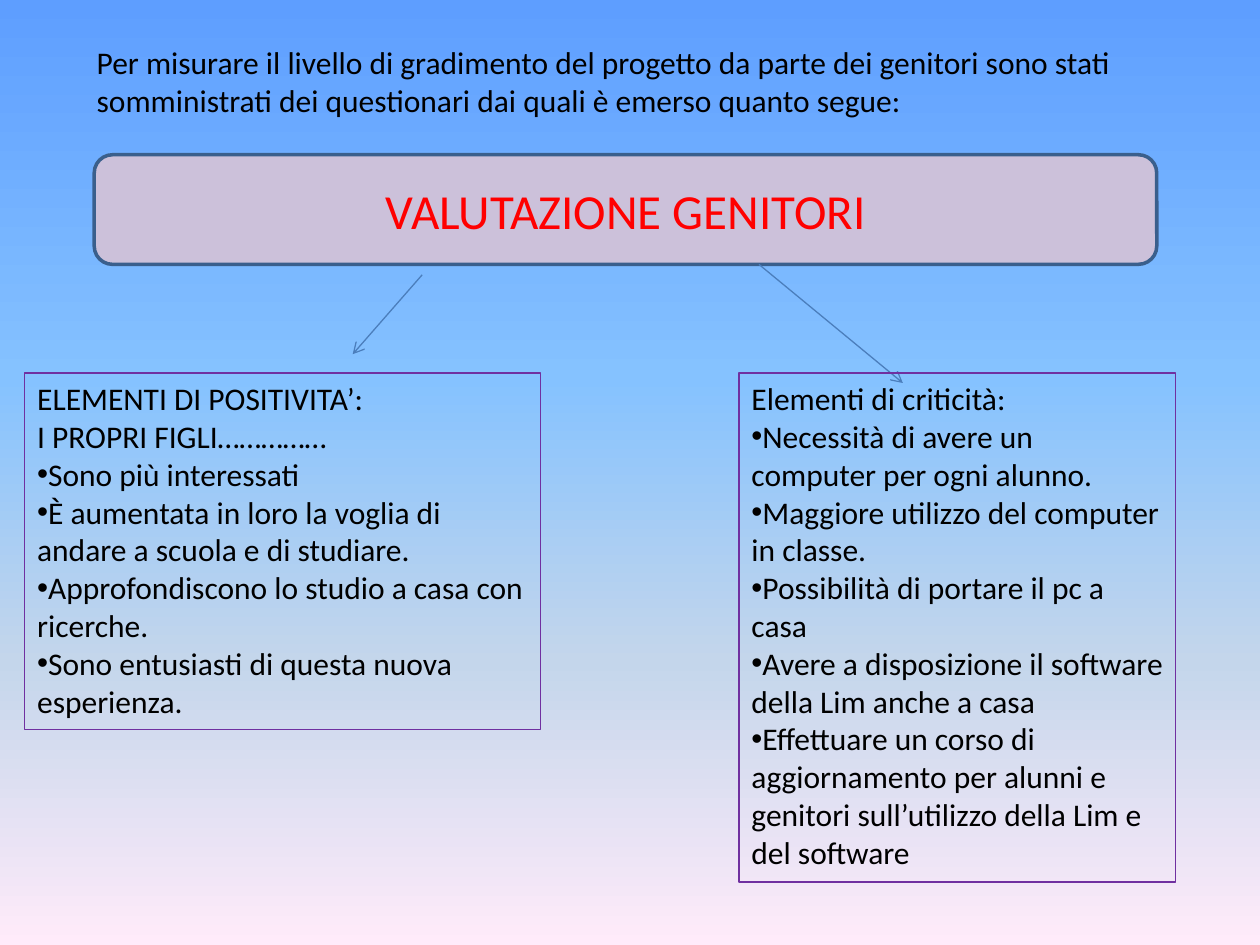
from lxml.etree import SubElement
from pptx import Presentation
from pptx.dml.color import RGBColor
from pptx.enum.shapes import MSO_CONNECTOR, MSO_SHAPE
from pptx.enum.text import MSO_ANCHOR, MSO_AUTO_SIZE, PP_ALIGN
from pptx.oxml.ns import qn
from pptx.util import Cm, Pt

COLORS = {
    "text": "000000",
    "title": "FF0000",
    "banner": "CCC1DA",
    "banner_line": "3A5F8C",
    "arrow": "4B7EBC",
    "box_line": "7030A0",
}
BACKGROUND_STOPS = [(0, "5E9EFF"), (40, "85C2FF"), (70, "C4D6EB"), (100, "FFEBFA")]
FONT = "Calibri"
BOX_TOP = 7.52

INTRO = (
    "Per misurare il livello di gradimento del progetto da parte dei genitori sono stati "
    "somministrati dei questionari dai quali è emerso quanto segue:"
)
STRENGTH_HEADINGS = ["ELEMENTI DI POSITIVITA’:", "I PROPRI FIGLI……………"]
STRENGTHS = [
    "Sono più interessati",
    "È aumentata in loro la voglia di andare a scuola e di studiare.",
    "Approfondiscono lo studio a casa con ricerche.",
    "Sono entusiasti di questa nuova esperienza.",
]
WEAKNESS_HEADINGS = ["Elementi di criticità:"]
WEAKNESSES = [
    "Necessità di avere un computer per ogni alunno.",
    "Maggiore utilizzo del computer in classe.",
    "Possibilità di portare il pc a casa",
    "Avere a disposizione il software della Lim anche a casa",
    "Effettuare un corso di aggiornamento per alunni e genitori sull’utilizzo della Lim "
    "e del software",
]


def color(name):
    return RGBColor.from_string(COLORS[name])


def set_line(line, color_name, width):
    line.color.rgb = color(color_name)
    line.width = Pt(width)


def paint_background(slide):
    fill = slide.background.fill
    fill.gradient()
    fill.gradient_angle = 270
    stop_list = slide.background._cSld.find(".//" + qn("a:gsLst"))
    for stop in list(stop_list):
        stop_list.remove(stop)
    for percent, hex_color in BACKGROUND_STOPS:
        stop = SubElement(stop_list, qn("a:gs"), pos=str(percent * 1000))
        SubElement(stop, qn("a:srgbClr"), val=hex_color)


def add_run(paragraph, text, size=18, color_name="text"):
    run = paragraph.add_run()
    run.text = text
    run.font.name = FONT
    run.font.size = Pt(size)
    run.font.color.rgb = color(color_name)


def add_bullet(paragraph):
    properties = paragraph._p.get_or_add_pPr()
    SubElement(properties, qn("a:buFont"), typeface="Arial")
    SubElement(properties, qn("a:buChar"), char="•")


def add_text_box(slide, left, top, width, height, headings, bullets=()):
    """Add a text box of plain lines followed by bulleted ones."""
    box = slide.shapes.add_textbox(Cm(left), Cm(top), Cm(width), Cm(height))
    frame = box.text_frame
    frame.word_wrap = True
    frame.auto_size = MSO_AUTO_SIZE.SHAPE_TO_FIT_TEXT
    for index, text in enumerate([*headings, *bullets]):
        paragraph = frame.add_paragraph() if index else frame.paragraphs[0]
        if index >= len(headings):
            add_bullet(paragraph)
        add_run(paragraph, text)
    return box


def add_outlined_list(slide, left, width, height, headings, bullets):
    box = add_text_box(slide, left, BOX_TOP, width, height, headings, bullets)
    set_line(box.line, "box_line", 0.75)


def add_banner(slide, text):
    banner = slide.shapes.add_shape(
        MSO_SHAPE.ROUNDED_RECTANGLE, Cm(1.9), Cm(3.12), Cm(21.42), Cm(2.21)
    )
    banner.shadow.inherit = False
    banner.fill.solid()
    banner.fill.fore_color.rgb = color("banner")
    set_line(banner.line, "banner_line", 2)
    frame = banner.text_frame
    frame.vertical_anchor = MSO_ANCHOR.MIDDLE
    paragraph = frame.paragraphs[0]
    paragraph.alignment = PP_ALIGN.CENTER
    add_run(paragraph, text, 28, "title")


def add_arrow(slide, start, end):
    points = [Cm(value) for value in (*start, *end)]
    arrow = slide.shapes.add_connector(MSO_CONNECTOR.STRAIGHT, *points)
    set_line(arrow.line, "arrow", 0.75)
    SubElement(arrow.line._get_or_add_ln(), qn("a:tailEnd"), type="arrow")
    SubElement(arrow._element.spPr, qn("a:effectLst"))


def main():
    presentation = Presentation()
    presentation.slide_width = Cm(25.4)
    presentation.slide_height = Cm(19.05)
    slide = presentation.slides.add_slide(presentation.slide_layouts[6])

    paint_background(slide)
    add_banner(slide, "VALUTAZIONE GENITORI")
    add_arrow(slide, (8.51, 5.54), (7.11, 7.14))
    add_arrow(slide, (15.3, 5.33), (18.2, 7.72))
    add_text_box(slide, 1.7, 0.74, 21.6, 1.8, [INTRO])
    add_outlined_list(slide, 0.5, 10.4, 7.19, STRENGTH_HEADINGS, STRENGTHS)
    add_outlined_list(slide, 14.9, 8.8, 10.26, WEAKNESS_HEADINGS, WEAKNESSES)

    presentation.save("out.pptx")


if __name__ == "__main__":
    main()
